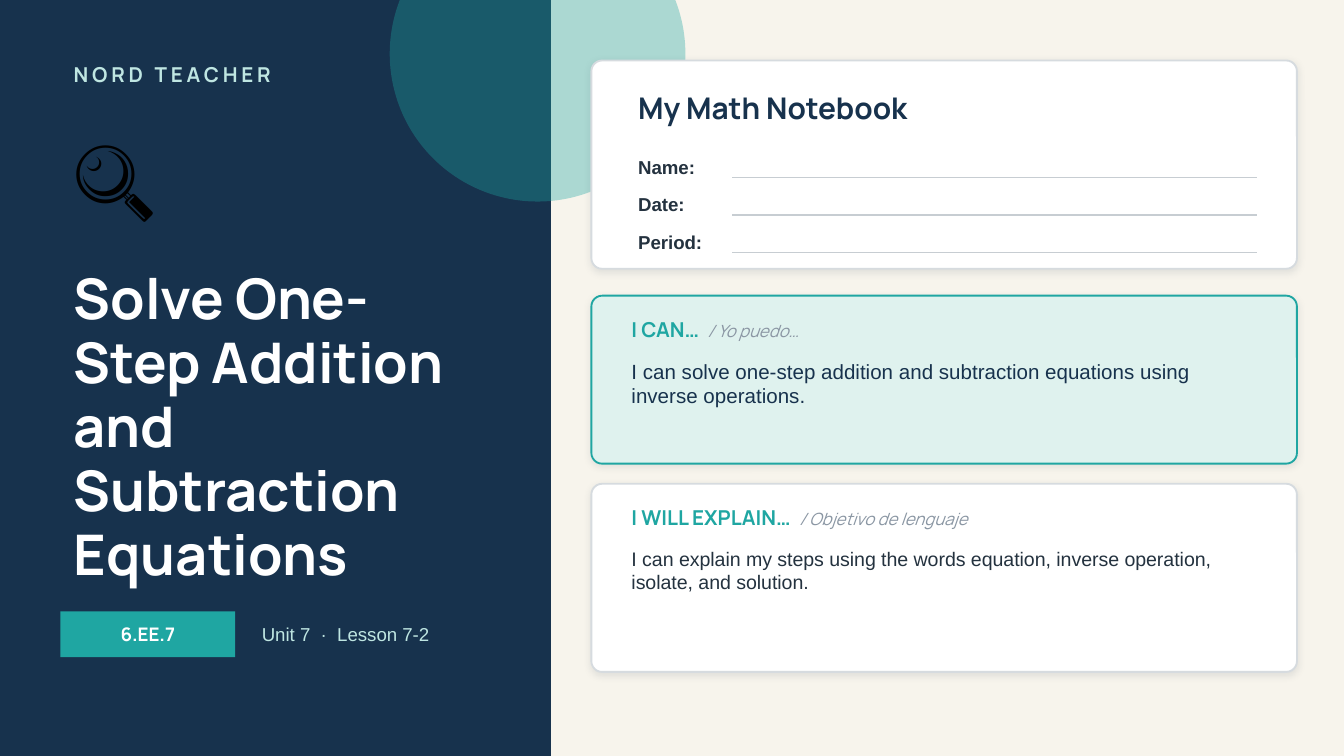
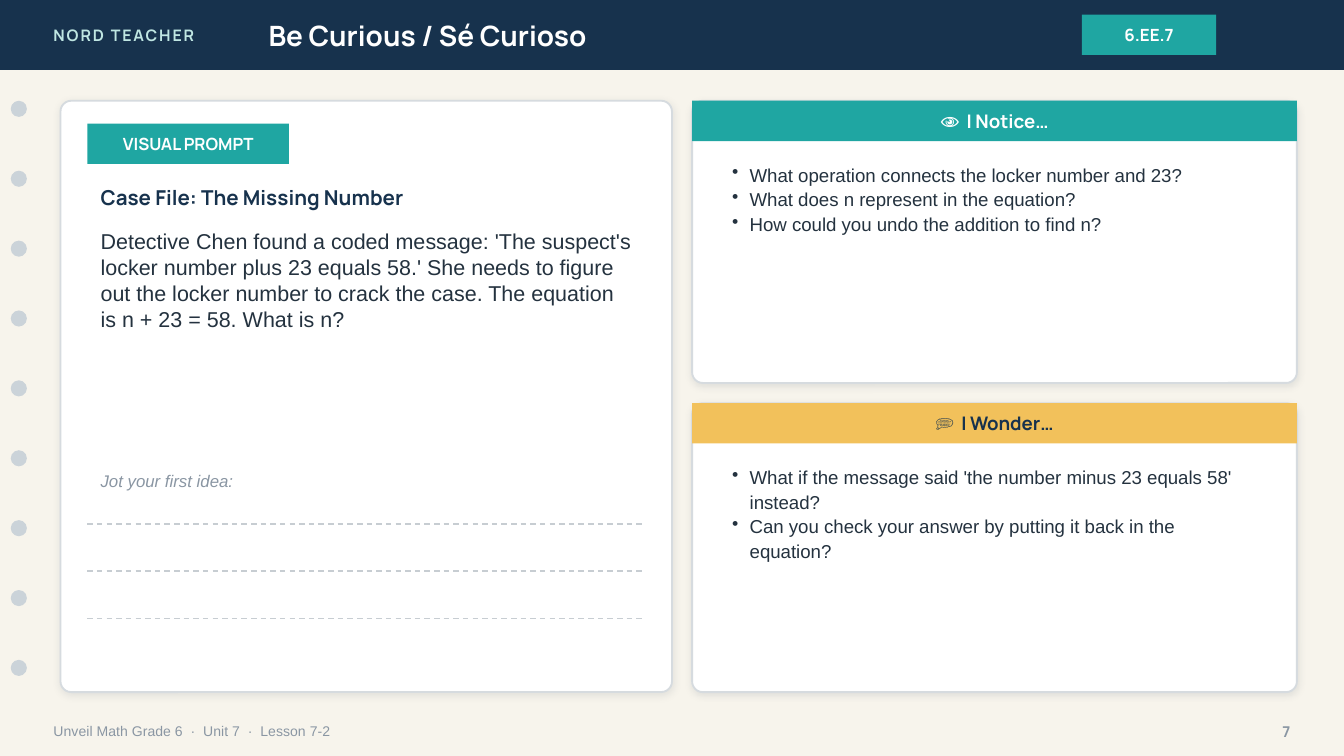
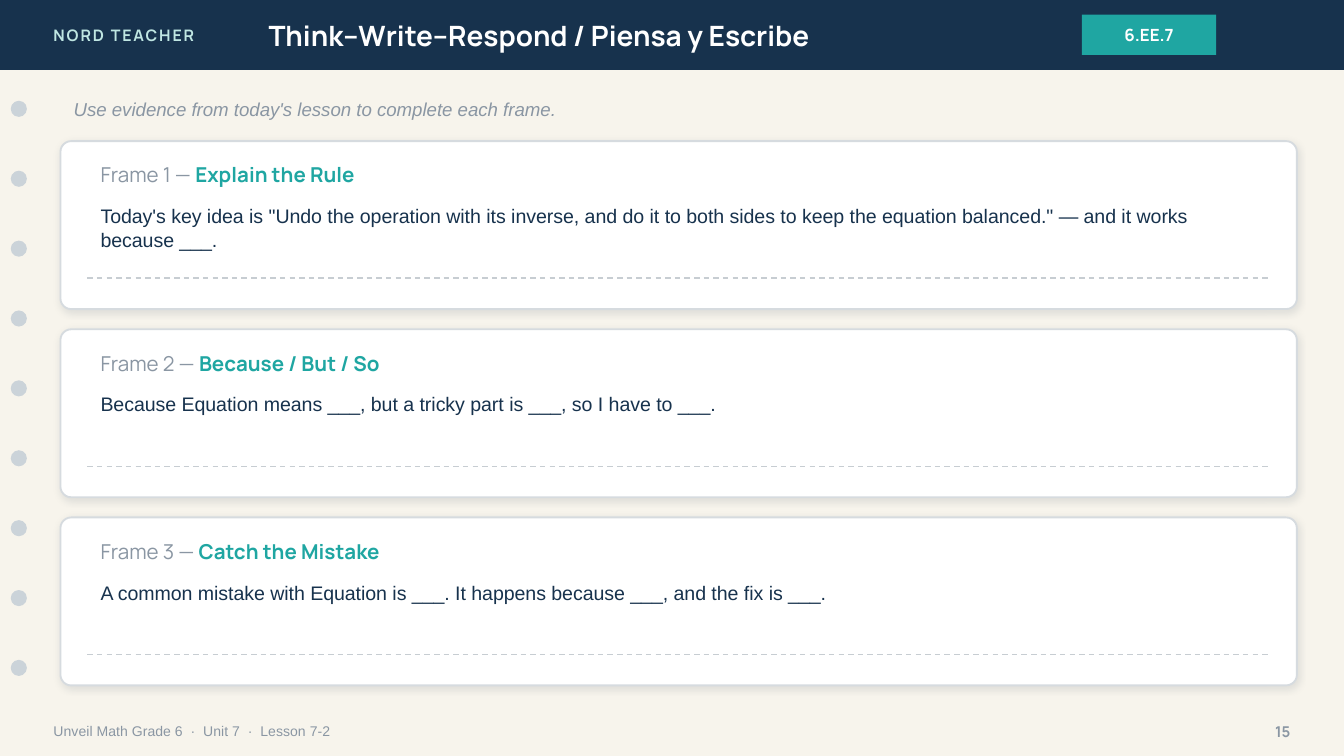
from dataclasses import dataclass
from typing import NamedTuple

from lxml import etree
from pptx import Presentation
from pptx import util as u
from pptx.dml.color import RGBColor
from pptx.enum import dml, shapes, text
from pptx.oxml import ns


@dataclass(frozen=True)
class Theme:
    navy: str = "17324D"
    teal: str = "1FA6A2"
    mint: str = "BFE6E2"
    pale_mint: str = "DFF2EE"
    gold: str = "F2C15B"
    cream: str = "F7F4EC"
    white: str = "FFFFFF"
    black: str = "000000"
    ink: str = "24323F"
    muted: str = "8A96A3"
    border: str = "D6DBDF"
    rule: str = "C7CDD2"
    hole: str = "CBD3D9"
    shadow: str = "1C2E42"
    head: str = "Manrope"
    body: str = "Arial"
    icon: str = "Calibri"
    icon_size: float = 44
    cover_size: float = 30
    card_title: float = 16
    band_title: float = 15
    prompt: float = 11.5
    heading: float = 11
    sentence: float = 10.5
    base: float = 10
    small: float = 9
    brand: float = 8.5
    page: float = 8
    footer: float = 7.5


class Box(NamedTuple):
    left: float
    top: float
    width: float
    height: float

    def inches(self) -> list[u.Length]:
        return [u.Inches(v) for v in self]


class Goal(NamedTuple):
    box: Box
    title: str
    spanish: str
    statement: str
    fill: str
    line: str
    color: str
    size: float


class Panel(NamedTuple):
    box: Box
    title: str
    fill: str
    color: str
    questions: str


class Frame(NamedTuple):
    title: str
    sentence: str


T = Theme()
WIDTH = 10
HEIGHT = WIDTH * 9 / 16
BRAND = "NORD TEACHER"
STANDARD = "6.EE.7"
LESSON = "Unit 7  ·  Lesson 7-2"
BAND_HEIGHT = 0.52
MARGIN = 0.45
PAD = 0.2
CORNER = 0.08
BULLET_INDENT = 0.13
CENTER = text.PP_ALIGN.CENTER
MIDDLE = text.MSO_ANCHOR.MIDDLE
RECT = shapes.MSO_SHAPE.RECTANGLE
OVAL = shapes.MSO_SHAPE.OVAL
ROUNDED = shapes.MSO_SHAPE.ROUNDED_RECTANGLE


def rgb(color: str) -> RGBColor:
    return RGBColor.from_string(color)


def sub(parent, tag: str, **attrs):
    return etree.SubElement(parent, ns.qn(tag), {k: str(v) for k, v in attrs.items()})


def add_run(p, words: str, *, size: float, color: str, font: str = T.body,
            bold: bool = False, italic: bool = False, spacing: float = 0) -> None:
    r = p.add_run()
    r.text = words
    r.font.size = u.Pt(size)
    r.font.name = font
    r.font.bold = bold
    r.font.italic = italic
    r.font.color.rgb = rgb(color)
    if spacing:
        r._r.get_or_add_rPr().set("spc", str(int(spacing * 100)))


def write(sp, words: str, *, align=None, anchor=MIDDLE, leading: float | None = None,
          bullets: bool = False, **run_format):
    """Fill a shape with one paragraph per line and return the last paragraph."""
    tf = sp.text_frame
    tf.word_wrap = True
    tf.vertical_anchor = anchor
    for i, line in enumerate(words.split("\n")):
        p = tf.add_paragraph() if i else tf.paragraphs[0]
        p.alignment = align
        if leading:
            p.line_spacing = leading
        if bullets:
            pPr = p._p.get_or_add_pPr()
            indent = u.Inches(BULLET_INDENT)
            pPr.set("marL", str(indent))
            pPr.set("indent", str(-indent))
            sub(pPr, "a:buChar", char="•")
        add_run(p, line, **run_format)
    return p


def add_text(s, box: Box, words: str, **text_format):
    return write(s.shapes.add_textbox(*box.inches()), words, **text_format)


def add_paragraph_text(s, box: Box, words: str, **text_format):
    """Body text that starts at the top of its box."""
    return add_text(s, box, words, anchor=text.MSO_ANCHOR.TOP, **text_format)


def add_shape(s, kind, box: Box, fill: str, line: str | None = None, alpha: int = 100):
    sp = s.shapes.add_shape(kind, *box.inches())
    sp.shadow.inherit = False
    sp.fill.solid()
    sp.fill.fore_color.rgb = rgb(fill)
    if alpha < 100:
        color = sp._element.spPr.find(f"{ns.qn('a:solidFill')}/{ns.qn('a:srgbClr')}")
        sub(color, "a:alpha", val=alpha * 1000)
    if line:
        sp.line.color.rgb = rgb(line)
        sp.line.width = u.Pt(1)
    else:
        sp.line.fill.background()
    return sp


def add_card(s, box: Box, fill: str = T.white, line: str = T.border) -> None:
    sp = add_shape(s, ROUNDED, box, fill, line)
    sp.adjustments[0] = CORNER / min(box.width, box.height)
    effects = sp._element.spPr.find(ns.qn("a:effectLst"))
    shadow = sub(effects, "a:outerShdw", blurRad=u.Pt(4), dist=u.Pt(1),
                 dir=90 * 60000, algn="bl", rotWithShape=0)
    sub(sub(shadow, "a:srgbClr", val=T.shadow), "a:alpha", val=10000)


def add_label(s, box: Box, words: str, size: float = T.small, fill: str = T.teal,
              color: str = T.white) -> None:
    """A filled rectangle with a bold centred caption."""
    write(add_shape(s, RECT, box, fill), words, size=size, color=color, font=T.head,
          bold=True, align=CENTER)


def add_rule(s, left: float, right: float, y: float, dashed: bool = True) -> None:
    line = s.shapes.add_connector(shapes.MSO_CONNECTOR.STRAIGHT, u.Inches(left),
                                  u.Inches(y), u.Inches(right), u.Inches(y))
    line.line.color.rgb = rgb(T.rule)
    line.line.width = u.Pt(0.75)
    if dashed:
        line.line.dash_style = dml.MSO_LINE.DASH
    sub(line._element.spPr, "a:effectLst")


def add_slide(prs):
    s = prs.slides.add_slide(prs.slide_layouts[6])
    s.background.fill.solid()
    s.background.fill.fore_color.rgb = rgb(T.cream)
    return s


def add_notebook_page(prs, title: str, number: int):
    """A slide with the title band, binder holes and footer."""
    s = add_slide(prs)
    add_shape(s, RECT, Box(0, 0, WIDTH, BAND_HEIGHT), T.navy)
    add_text(s, Box(0.3, 0, 2.4, BAND_HEIGHT), BRAND, size=T.brand, color=T.mint,
             font=T.head, bold=True, spacing=1)
    add_text(s, Box(1.9, 0, 5.6, BAND_HEIGHT), title, size=T.band_title, color=T.white,
             font=T.head, bold=True)
    add_label(s, Box(8.05, 0.11, 1, 0.3), STANDARD)
    for i in range(9):
        add_shape(s, OVAL, Box(0.08, 0.75 + 0.52 * i, 0.12, 0.12), T.hole)
    add_text(s, Box(0.3, 5.3, 7, 0.28), f"Unveil Math Grade 6  ·  {LESSON}",
             size=T.footer, color=T.muted)
    add_text(s, Box(9.2, 5.3, 0.5, 0.28), str(number), size=T.page, color=T.muted,
             font=T.head, bold=True, align=text.PP_ALIGN.RIGHT)
    return s


def add_goal(s, goal: Goal) -> None:
    left, top, width, height = goal.box
    add_card(s, goal.box, goal.fill, goal.line)
    p = add_text(s, Box(left + PAD, top + 0.1, width - 2 * PAD, 0.3), f"{goal.title}  ",
                 size=T.heading, color=T.teal, font=T.head, bold=True)
    add_run(p, f"/ {goal.spanish}", size=T.small, color=T.muted, font=T.head, italic=True)
    add_paragraph_text(s, Box(left + PAD, top + 0.42, width - 2 * PAD, height - 0.47),
                       goal.statement, size=goal.size, color=goal.color)


def build_cover(prs) -> None:
    s = add_slide(prs)
    add_shape(s, RECT, Box(0, 0, 4.1, HEIGHT), T.navy)
    add_shape(s, OVAL, Box(2.9, -0.7, 2.2, 2.2), T.teal, alpha=35)
    add_text(s, Box(MARGIN, 0.4, 3.3, 0.3), BRAND, size=T.heading, color=T.mint,
             font=T.head, bold=True, spacing=2)
    add_text(s, Box(MARGIN, 0.85, 1.5, 0.9), "🔍", size=T.icon_size, color=T.black,
             font=T.icon)
    add_paragraph_text(s, Box(MARGIN, 1.95, 3.3, 1.7),
                       "Solve One-Step Addition and Subtraction Equations",
                       size=T.cover_size, color=T.white, font=T.head, bold=True,
                       leading=0.95)
    add_label(s, Box(MARGIN, 4.55, 1.3, 0.34), STANDARD, size=T.base)
    add_text(s, Box(1.85, 4.55, 2.1, 0.34), LESSON, size=T.base, color=T.mint)

    add_card(s, Box(4.4, 0.45, 5.25, 1.55))
    add_text(s, Box(4.65, 0.6, 4.8, 0.4), "My Math Notebook", size=T.card_title,
             color=T.navy, font=T.head, bold=True)
    for i, field in enumerate(("Name:", "Date:", "Period:")):
        top = 1.12 + 0.28 * i
        add_text(s, Box(4.65, top, 0.8, 0.24), field, size=T.base, color=T.ink, bold=True)
        add_rule(s, 5.45, 9.35, top + 0.2, dashed=False)

    goals = (
        Goal(Box(4.4, 2.2, 5.25, 1.25), "I CAN…", "Yo puedo…",
             "I can solve one-step addition and subtraction equations using "
             "inverse operations.",
             T.pale_mint, T.teal, T.navy, T.heading),
        Goal(Box(4.4, 3.6, 5.25, 1.4), "I WILL EXPLAIN…", "Objetivo de lenguaje",
             "I can explain my steps using the words equation, inverse operation, "
             "isolate, and solution.",
             T.white, T.border, T.ink, T.sentence),
    )
    for goal in goals:
        add_goal(s, goal)


def add_panel(s, panel: Panel) -> None:
    left, top, width, height = panel.box
    add_card(s, panel.box)
    add_label(s, Box(left, top, width, 0.3), panel.title, T.base, panel.fill, panel.color)
    add_paragraph_text(s, Box(left + PAD, top + 0.4, width - 2 * PAD, height - 0.5),
                       panel.questions, size=T.base, color=T.ink, leading=1.1,
                       bullets=True)


def build_be_curious(prs) -> None:
    s = add_notebook_page(prs, "Be Curious / Sé Curioso", 7)
    left, width = MARGIN + PAD, 4.15
    add_card(s, Box(MARGIN, 0.75, 4.55, 4.4))
    add_label(s, Box(left, 0.92, 1.5, 0.3), "VISUAL PROMPT")
    add_text(s, Box(left, 1.32, width, 0.3), "Case File: The Missing Number",
             size=T.heading, color=T.navy, font=T.head, bold=True)
    add_paragraph_text(s, Box(left, 1.65, width, 1.7),
                       "Detective Chen found a coded message: 'The suspect's locker "
                       "number plus 23 equals 58.' She needs to figure out the locker "
                       "number to crack the case. The equation is n + 23 = 58. "
                       "What is n?",
                       size=T.prompt, color=T.ink)
    add_text(s, Box(left, 3.45, 4, 0.25), "Jot your first idea:", size=T.small,
             color=T.muted, italic=True)
    for i in range(3):
        add_rule(s, left, left + width, 3.9 + 0.35 * i)

    panels = (
        Panel(Box(5.15, 0.75, 4.5, 2.1), "👁  I Notice…", T.teal, T.white,
              "What operation connects the locker number and 23?\n"
              "What does n represent in the equation?\n"
              "How could you undo the addition to find n?"),
        Panel(Box(5.15, 3, 4.5, 2.15), "💭  I Wonder…", T.gold, T.navy,
              "What if the message said 'the number minus 23 equals 58' instead?\n"
              "Can you check your answer by putting it back in the equation?"),
    )
    for panel in panels:
        add_panel(s, panel)


def build_think_write_respond(prs) -> None:
    s = add_notebook_page(prs, "Think–Write–Respond / Piensa y Escribe", 15)
    full_width = 9.2
    left, width = MARGIN + PAD, full_width - 2 * PAD
    add_text(s, Box(MARGIN, 0.66, full_width, 0.3),
             "Use evidence from today's lesson to complete each frame.",
             size=T.base, color=T.muted, italic=True)
    frames = (
        Frame("Explain the Rule",
              'Today\'s key idea is "Undo the operation with its inverse, and do it to '
              'both sides to keep the equation balanced." — and it works because ___.'),
        Frame("Because / But / So",
              "Because Equation means ___, but a tricky part is ___, so I have to ___."),
        Frame("Catch the Mistake",
              "A common mistake with Equation is ___. It happens because ___, "
              "and the fix is ___."),
    )
    for i, frame in enumerate(frames):
        top = 1.05 + 1.4 * i
        add_card(s, Box(MARGIN, top, full_width, 1.25))
        p = add_text(s, Box(left, top + 0.1, width, 0.3), f"Frame {i + 1} — ",
                     size=T.heading, color=T.muted, font=T.head)
        add_run(p, frame.title, size=T.heading, color=T.teal, font=T.head, bold=True)
        add_paragraph_text(s, Box(left, top + 0.42, width, 0.4), frame.sentence,
                           size=T.sentence, color=T.navy)
        add_rule(s, left, left + width, top + 1.02)


def main() -> None:
    prs = Presentation()
    prs.slide_width, prs.slide_height = u.Inches(WIDTH), u.Inches(HEIGHT)
    build_cover(prs)
    build_be_curious(prs)
    build_think_write_respond(prs)
    prs.save("out.pptx")


if __name__ == "__main__":
    main()
